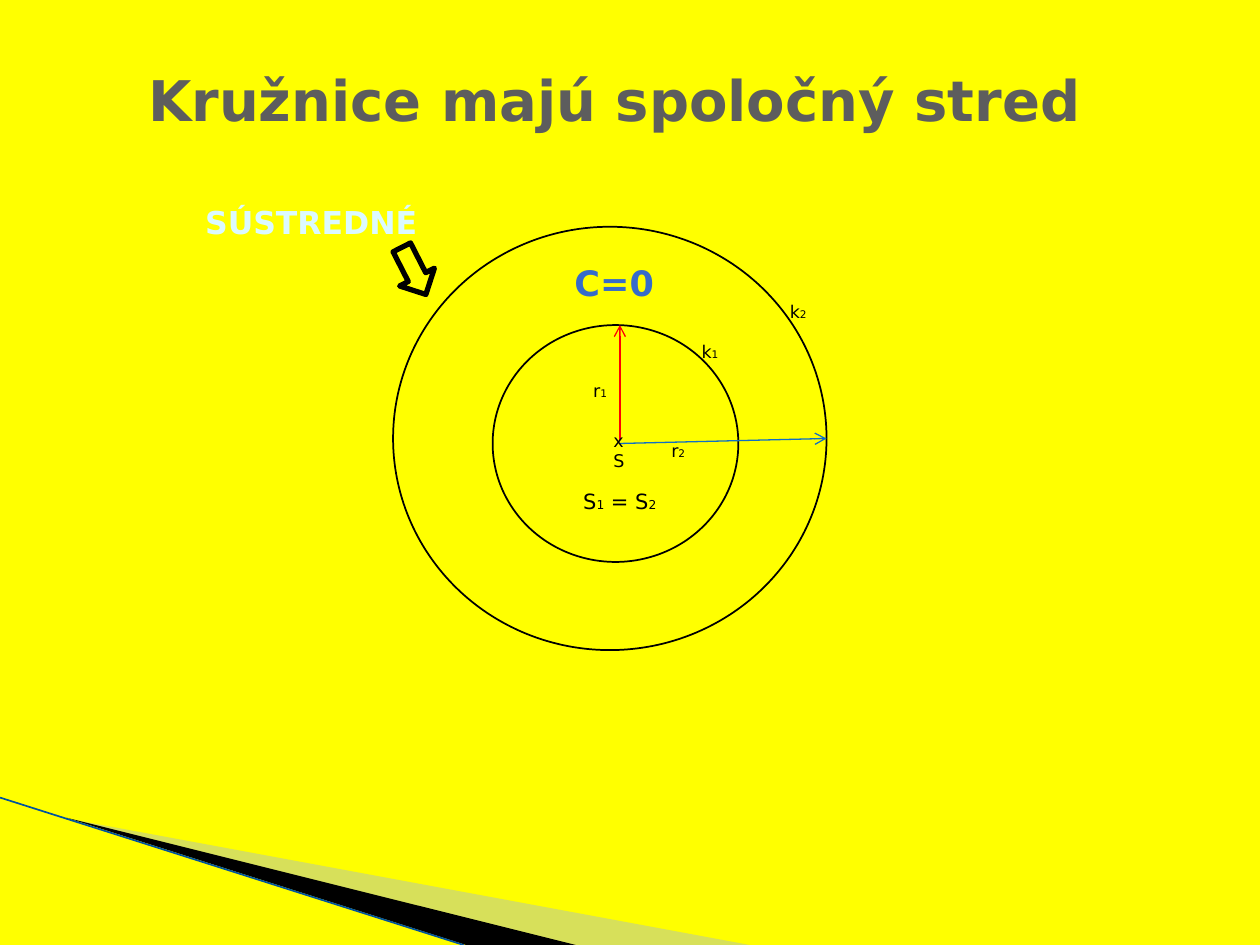
from dataclasses import dataclass

from lxml import etree
from pptx import Presentation
from pptx.dml.color import RGBColor
from pptx.enum.shapes import MSO_CONNECTOR, MSO_SHAPE
from pptx.enum.text import MSO_ANCHOR, MSO_AUTO_SIZE, PP_ALIGN
from pptx.oxml.ns import qn
from pptx.util import Inches, Pt

STRAIGHT = MSO_CONNECTOR.STRAIGHT
CIRCLE = MSO_SHAPE.FLOWCHART_CONNECTOR
ARROW = MSO_SHAPE.DOWN_ARROW
TOP = MSO_ANCHOR.TOP
GROW = MSO_AUTO_SIZE.SHAPE_TO_FIT_TEXT
LEFT, CENTER = PP_ALIGN.LEFT, PP_ALIGN.CENTER


@dataclass(frozen=True)
class Theme:
    face: str = "DejaVu Sans"
    back: str = "FFFF00"
    ink: str = "000000"
    title: str = "5D5D5D"
    value: str = "356BCA"
    pale: str = "DCFAFF"
    red: str = "FF0000"
    blue: str = "0F6FC6"
    haze: str = "9DB2E1"
    edge: str = "00539E"
    head: int = 32
    big: int = 20
    name: int = 18
    mid: int = 12
    note: int = 10
    sub: int = 7
    tiny: int = 6


THEME = Theme()


def paint(fill, color):
    fill.solid()
    fill.fore_color.rgb = RGBColor.from_string(color)


def add_text(slide, box, runs, color=THEME.ink, bold=False, align=LEFT, wrap=True):
    frame = slide.shapes.add_textbox(*map(Inches, box)).text_frame
    for key, value in {"word_wrap": wrap, "auto_size": GROW,
                       "vertical_anchor": TOP}.items():
        setattr(frame, key, value)
    para = frame.paragraphs[0]
    para.alignment = align
    for text, size in runs:
        run = para.add_run()
        run.text = text
        for key, value in {"name": THEME.face, "size": Pt(size), "bold": bold}.items():
            setattr(run.font, key, value)
        run.font.color.rgb = RGBColor.from_string(color)


def add_line(slide, start, end, color, width, arrow=False):
    line = slide.shapes.add_connector(STRAIGHT, *map(Inches, start + end))
    line.line.color.rgb = RGBColor.from_string(color)
    line.line.width = Pt(width)
    props = line._element.spPr
    if arrow:
        etree.SubElement(props.find(qn("a:ln")), qn("a:tailEnd"), type="arrow")
    etree.SubElement(props, qn("a:effectLst"))


def add_form(slide, kind, box, width, fill=None, turn=0):
    form = slide.shapes.add_shape(kind, *map(Inches, box))
    form.shadow.inherit = False
    form.rotation = turn
    form.line.color.rgb = RGBColor.from_string(THEME.ink)
    form.line.width = Pt(width)
    if fill:
        paint(form.fill, fill)
    else:
        form.fill.background()


def add_wedge(slide, points, color, alpha=100):
    spots = [(Inches(x), Inches(y)) for x, y in points]
    path = slide.shapes.build_freeform(*spots[0], scale=1.0)
    path.add_line_segments(spots[1:], close=True)
    wedge = path.convert_to_shape()
    wedge.shadow.inherit = False
    wedge.line.fill.background()
    paint(wedge.fill, color)
    if alpha < 100:
        tint = wedge._element.spPr.find(qn("a:solidFill"))[0]
        etree.SubElement(tint, qn("a:alpha"), val=str(alpha * 1000))


def add_decor(slide):
    add_wedge(slide, [(0.55, 6.5), (5.95, 7.5), (4.56, 7.5)], THEME.haze, 40)
    add_wedge(slide, [(0.53, 6.49), (4.57, 7.5), (3.7, 7.5)], THEME.ink)
    add_line(slide, (0, 6.33), (3.68, 7.5), THEME.edge, 0.95)


def add_rings(slide):
    for box in ((3.91, 2.58, 1.95, 1.88), (3.12, 1.8, 3.44, 3.36)):
        add_form(slide, CIRCLE, box, 1)
    add_line(slide, (4.92, 3.49), (4.92, 2.58), THEME.red, 0.75, True)
    add_line(slide, (4.92, 3.52), (6.56, 3.48), THEME.blue, 0.75, True)


def add_marks(slide):
    marks = (
        ("x", "", 4.77, 3.36), ("S", "", 4.77, 3.52),
        ("k", "1", 5.47, 2.66), ("k", "2", 6.17, 2.34),
        ("r", "1", 4.61, 2.97), ("r", "2", 5.23, 3.44),
    )
    for sign, index, x, y in marks:
        runs = [(sign, THEME.note)]
        if index:
            runs.append((index, THEME.tiny))
        add_text(slide, (x, y, 0.5, 0.27), runs)
    add_text(slide, (4.53, 3.83, 1.88, 0.3), [
        ("S", THEME.mid), ("1", THEME.sub), (" = S", THEME.mid), ("2", THEME.sub)])


def add_heads(slide):
    heads = (
        ((4.45, 2.03, 0.85, 0.44), "C=0", THEME.big, THEME.value, False),
        ((1.52, 1.56, 1.9, 0.4), "SÚSTREDNÉ", THEME.name, THEME.pale, False),
        ((0.7, 0.47, 8.36, 0.64), "Kružnice majú spoločný stred",
         THEME.head, THEME.title, True),
    )
    for box, text, size, color, wrap in heads:
        add_text(slide, box, [(text, size)], color, True, CENTER, wrap)


def main():
    deck = Presentation()
    deck.slide_width, deck.slide_height = Inches(10), Inches(7.5)
    slide = deck.slides.add_slide(deck.slide_layouts[6])
    paint(slide.background.fill, THEME.back)
    add_decor(slide)
    add_rings(slide)
    add_marks(slide)
    add_form(slide, ARROW, (3.13, 1.94, 0.31, 0.42), 3, THEME.back, 332.9)
    add_heads(slide)
    deck.save("out.pptx")


if __name__ == "__main__":
    main()
